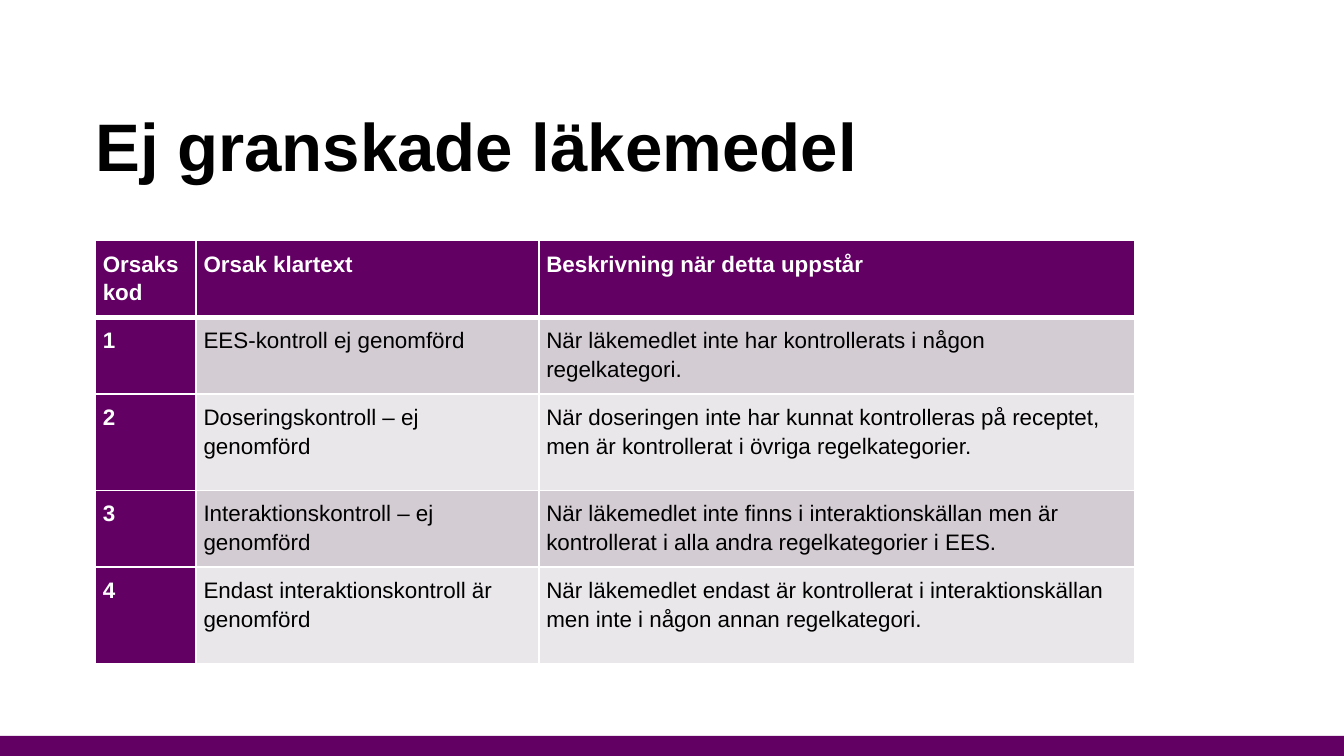
from dataclasses import dataclass

from lxml import etree
from pptx import Presentation, util as u
from pptx.dml.color import RGBColor
from pptx.enum import shapes, text
from pptx.oxml import ns


@dataclass(frozen=True)
class Theme:
    font: str = "Arial"
    accent: str = "620063"
    ink: str = "000000"
    paper: str = "FFFFFF"
    bands: tuple = ("D3CCD3", "EAE7EA")
    title_size: int = 36
    title_leading: int = 41
    table_size: int = 12
    table_leading: float = 1.15
    thin: int = 1
    thick: int = 3


class ReviewSlide:
    """Draws styled elements on one slide, on a grid of 100 columns with square rows."""

    def __init__(self, deck, theme):
        self.theme = theme
        self.slide = deck.slides.add_slide(deck.slide_layouts[6])
        self.unit = deck.slide_width / 100
        self.rows = deck.slide_height / self.unit

    def span(self, *lengths):
        return [u.Emu(round(length * self.unit)) for length in lengths]

    def add_words(self, paragraph, words, size, color, bold, leading):
        paragraph.line_spacing = leading
        run = paragraph.add_run()
        run.text = words
        run.font.name = self.theme.font
        run.font.size = u.Pt(size)
        run.font.bold = bold
        run.font.color.rgb = RGBColor.from_string(color)

    def footer_bar(self, height):
        bar = self.slide.shapes.add_shape(
            shapes.MSO_SHAPE.RECTANGLE, *self.span(0, self.rows - height, 100, height))
        bar.shadow.inherit = False
        bar.fill.solid()
        bar.fill.fore_color.rgb = RGBColor.from_string(self.theme.accent)
        bar.line.fill.background()

    def title(self, words, left, top, width, height):
        frame = self.slide.shapes.add_textbox(*self.span(left, top, width, height)).text_frame
        frame.word_wrap = True
        frame.vertical_anchor = text.MSO_ANCHOR.TOP
        frame.margin_left = frame.margin_right = frame.margin_top = frame.margin_bottom = 0
        self.add_words(frame.paragraphs[0], words, self.theme.title_size, self.theme.ink,
                       True, u.Pt(self.theme.title_leading))

    def border(self, side, width):
        line = etree.Element(ns.qn(f"a:ln{side}"), w=str(u.Pt(width)))
        fill = etree.SubElement(line, ns.qn("a:solidFill"))
        etree.SubElement(fill, ns.qn("a:srgbClr"), val=self.theme.paper)
        return line

    def cell(self, cell, words, row, column, padding):
        theme = self.theme
        strong = row == 0 or column == 0
        cell.margin_left, cell.margin_right, cell.margin_top, cell.margin_bottom = (
            self.span(padding) * 4)
        cell.vertical_anchor = text.MSO_ANCHOR.TOP
        cell.fill.solid()
        cell.fill.fore_color.rgb = RGBColor.from_string(
            theme.accent if strong else theme.bands[(row - 1) % 2])
        thick_side = {0: "B", 1: "T"}.get(row)
        properties = cell._tc.get_or_add_tcPr()
        for place, side in enumerate("LRTB"):
            width = theme.thick if side == thick_side else theme.thin
            properties.insert(place, self.border(side, width))
        self.add_words(cell.text_frame.paragraphs[0], words, theme.table_size,
                       theme.paper if strong else theme.ink, strong, theme.table_leading)

    def table(self, entries, left, top, widths, heights, padding):
        grid = self.slide.shapes.add_table(
            len(heights), len(widths),
            *self.span(left, top, sum(widths), sum(heights))).table
        grid.first_row = grid.horz_banding = False
        for column, width in zip(grid.columns, self.span(*widths)):
            column.width = width
        for row, height in zip(grid.rows, self.span(*heights)):
            row.height = height
        for row, record in enumerate(entries):
            for column, words in enumerate(record):
                self.cell(grid.cell(row, column), words, row, column, padding)


REASONS = [
    ("Orsakskod", "Orsak klartext", "Beskrivning när detta uppstår"),
    ("1", "EES-kontroll ej genomförd",
     "När läkemedlet inte har kontrollerats i någon regelkategori."),
    ("2", "Doseringskontroll – ej genomförd",
     "När doseringen inte har kunnat kontrolleras på receptet, "
     "men är kontrollerat i övriga regelkategorier."),
    ("3", "Interaktionskontroll – ej genomförd",
     "När läkemedlet inte finns i interaktionskällan men är "
     "kontrollerat i alla andra regelkategorier i EES."),
    ("4", "Endast interaktionskontroll är genomförd",
     "När läkemedlet endast är kontrollerat i interaktionskällan "
     "men inte i någon annan regelkategori."),
]


def main():
    deck = Presentation()
    deck.slide_width = u.Inches(10)
    deck.slide_height = deck.slide_width * 9 // 16
    review = ReviewSlide(deck, Theme())
    margin, widths = 7.1, (7.5, 25.5, 44.3)
    review.footer_bar(1.5)
    review.title("Ej granskade läkemedel", margin, 8.1, sum(widths), 5.2)
    review.table(REASONS, margin, 17.9, widths, (5.4, 5.5, 7.2, 5.4, 7.2), 0.55)
    deck.save("out.pptx")


if __name__ == "__main__":
    main()
